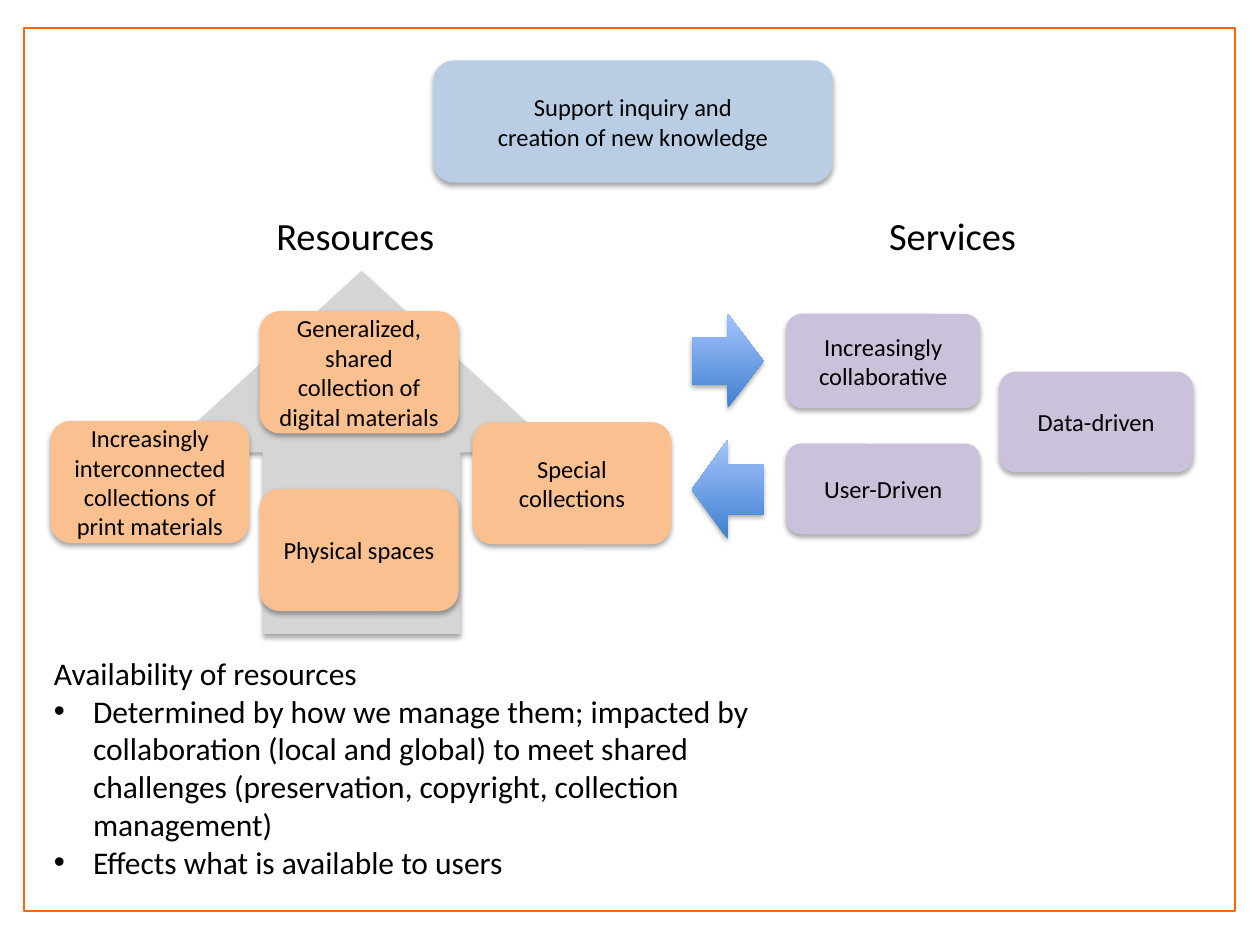
from lxml.etree import SubElement
from pptx import Presentation
from pptx.dml.color import RGBColor
from pptx.enum.shapes import MSO_SHAPE
from pptx.enum.text import MSO_ANCHOR, MSO_AUTO_SIZE, PP_ALIGN
from pptx.oxml.ns import qn
from pptx.util import Inches, Pt

BLUE, ORANGE, PURPLE, GREY = "B9CDE5", "FAC090", "CCC1DA", "D5D5D5"
GOAL = ["Support inquiry and", "creation of new knowledge"]
SIZE = (1.58, 0.97)
SOURCES = [
    ("Increasingly interconnected collections of print materials", 0.4, 3.34),
    ("Generalized, shared collection of digital materials", 2.06, 2.47),
    ("Special collections", 3.75, 3.35),
    ("Physical spaces", 2.06, 3.88),
]
SERVICES = [
    ("Increasingly collaborative", 6.24, 2.49, 0.75),
    ("Data-driven", 7.93, 2.95, 0.8),
    ("User-Driven", 6.24, 3.52, 0.72),
]
HEADS = [("Resources", 1.98), ("Services", 6.72)]
ARROWS = [(MSO_SHAPE.RIGHT_ARROW, 2.49, 0.75), (MSO_SHAPE.LEFT_ARROW, 3.49, 0.79)]
TITLE = "Availability of resources"
POINTS = [
    "Determined by how we manage them; impacted by collaboration (local and global) "
    "to meet shared challenges (preservation, copyright, collection management)",
    "Effects what is available to users",
]


def color(code):
    """Turn a hex string into a colour."""
    return RGBColor.from_string(code)


def write(frame, lines, size, align=PP_ALIGN.LEFT):
    """Write each line as one paragraph with one run."""
    frame.word_wrap = True
    for i, line in enumerate(lines):
        para = frame.add_paragraph() if i else frame.paragraphs[0]
        para.alignment = align
        run = para.add_run()
        run.text = line
        run.font.name = "Calibri"
        run.font.size = Pt(size)
        run.font.color.rgb = color("000000")


def add_form(slide, kind, box, fill=None):
    """Add a borderless preset shape with a soft shadow below it."""
    form = slide.shapes.add_shape(kind, *map(Inches, box))
    if fill:
        form.fill.solid()
        form.fill.fore_color.rgb = color(fill)
    form.line.fill.background()
    form.shadow.inherit = False
    effect = form._element.spPr.find(qn("a:effectLst"))
    shade = SubElement(effect, qn("a:outerShdw"), blurRad=str(Pt(3.1)),
                       dist=str(Pt(1.8)), dir="5400000", rotWithShape="0")
    tone = SubElement(shade, qn("a:srgbClr"), val="000000")
    SubElement(tone, qn("a:alpha"), val="35000")
    return form


def add_card(slide, lines, box, fill):
    """Add a rounded card with centred text."""
    card = add_form(slide, MSO_SHAPE.ROUNDED_RECTANGLE, box, fill)
    card.text_frame.vertical_anchor = MSO_ANCHOR.MIDDLE
    write(card.text_frame, lines, 14, PP_ALIGN.CENTER)


def add_arrow(slide, kind, box):
    """Add an arrow that fades from dark at the foot to light at the top."""
    arrow = add_form(slide, kind, box)
    arrow.fill.gradient()
    arrow.fill.gradient_angle = 90
    for stop, code in zip(arrow.fill.gradient_stops, ("3F80CE", "A4C4FF")):
        stop.color.rgb = color(code)


def add_text(slide, lines, box, size, align=PP_ALIGN.LEFT):
    """Add a wrapped text box and return its paragraphs."""
    frame = slide.shapes.add_textbox(*map(Inches, box)).text_frame
    write(frame, lines, size, align)
    frame.auto_size = MSO_AUTO_SIZE.SHAPE_TO_FIT_TEXT
    return frame.paragraphs


def add_bullet(para):
    """Give a paragraph a hanging bullet."""
    props = para._p.get_or_add_pPr()
    props.set("marL", str(Inches(0.31)))
    props.set("indent", str(Inches(-0.31)))
    SubElement(props, qn("a:buFont"), typeface="Arial")
    SubElement(props, qn("a:buChar"), char="•")


def main():
    """Build the slide and save it."""
    deck = Presentation()
    deck.slide_width, deck.slide_height = Inches(10), Inches(7.5)
    slide = deck.slides.add_slide(deck.slide_layouts[6])

    frame = slide.shapes.add_shape(
        MSO_SHAPE.RECTANGLE, *map(Inches, (0.19, 0.22, 9.61, 7.01)))
    frame.shadow.inherit = False
    frame.fill.solid()
    frame.fill.fore_color.rgb = color("FFFFFF")
    frame.line.color.rgb = color("FF6600")
    frame.line.width = Pt(1)

    add_form(slide, MSO_SHAPE.UP_ARROW, (1.3, 2.15, 3.14, 2.88), GREY)
    add_card(slide, GOAL, (3.44, 0.48, 3.17, 0.97), BLUE)
    for text, left, top in SOURCES:
        add_card(slide, [text], (left, top, *SIZE), ORANGE)
    paras = add_text(slide, [TITLE, *POINTS], (0.33, 5.14, 5.95, 1.92), 18)
    for para in paras[1:]:
        add_bullet(para)
    for text, left, top, high in SERVICES:
        add_card(slide, [text], (left, top, 1.54, high), PURPLE)
    for text, left in HEADS:
        add_text(slide, [text], (left, 1.63, 1.68, 0.47), 22, PP_ALIGN.CENTER)
    for kind, top, high in ARROWS:
        add_arrow(slide, kind, (5.49, top, 0.57, high))

    deck.save("out.pptx")


if __name__ == "__main__":
    main()
